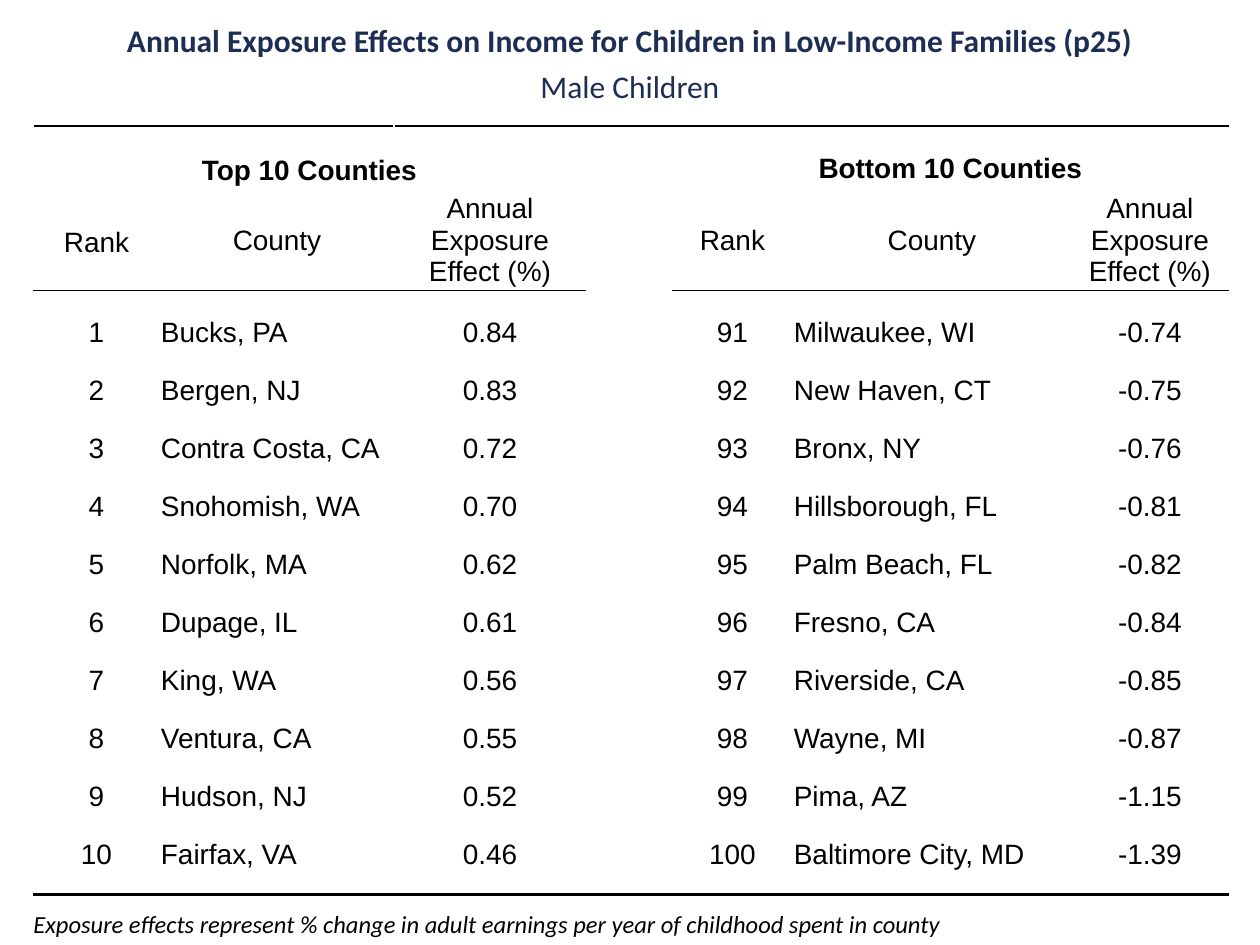
from lxml import etree
from pptx import Presentation
from pptx import util as u
from pptx.dml.color import RGBColor
from pptx.enum import text
from pptx.oxml import ns

PX = 914400 / 126
BLACK, WHITE, NAVY = "000000", "FFFFFF", "1E2D53"
CENTER, LEFT = text.PP_ALIGN.CENTER, text.PP_ALIGN.LEFT
MIDDLE, BOTTOM = text.MSO_ANCHOR.MIDDLE, text.MSO_ANCHOR.BOTTOM
NO_STYLE = "{2D5ABB26-0587-4C30-8999-92F81FD0307C}"


def px(n):
    return u.Emu(round(n * PX))


def rgb(value):
    return RGBColor.from_string(value)


class Sheet:
    heading_font, table_font = "Calibri", "Arial"
    table_size = 16

    def __init__(self, prs):
        self.slide = prs.slides.add_slide(prs.slide_layouts[6])

    def style(self, paragraph, font, size, color, align, bold=False, italic=False):
        paragraph.alignment = align
        for run in paragraph.runs:
            run.font.name, run.font.size = font, u.Pt(size)
            run.font.bold, run.font.italic = bold, italic
            run.font.color.rgb = rgb(color)

    def label(self, words, box, size, color, align=LEFT, inset=True, **look):
        frame = self.slide.shapes.add_textbox(*map(px, box)).text_frame
        frame.word_wrap = True
        frame.auto_size = text.MSO_AUTO_SIZE.SHAPE_TO_FIT_TEXT
        if not inset:
            frame.margin_left = frame.margin_right = 0
            frame.margin_top = frame.margin_bottom = 0
        frame.text = words
        self.style(frame.paragraphs[0], self.heading_font, size, color, align, **look)

    def table(self, left, top, widths, heights):
        box = map(px, (left, top, sum(widths), sum(heights)))
        grid = self.slide.shapes.add_table(len(heights), len(widths), *box).table
        grid.first_row = grid.horz_banding = False
        grid._tbl.tblPr.find(ns.qn("a:tableStyleId")).text = NO_STYLE
        for column, width in zip(grid.columns, widths):
            column.width = px(width)
        for row, height in zip(grid.rows, heights):
            row.height = px(height)
        return grid

    def cell(self, cell, words, borders, anchor=MIDDLE, align=CENTER,
             side=8, bold=False, spacing=None):
        cell.margin_left = cell.margin_right = px(side)
        cell.margin_top = cell.margin_bottom = 0
        cell.vertical_anchor = anchor
        for edge in "LRTB":
            if edge in borders:
                self.border(cell, edge, *borders[edge])
        cell.fill.solid()
        cell.fill.fore_color.rgb = rgb(WHITE)
        cell.text_frame.text = words
        paragraph = cell.text_frame.paragraphs[0]
        self.style(paragraph, self.table_font, self.table_size, BLACK, align, bold)
        if spacing:
            paragraph.line_spacing = spacing
        if not words:
            # A small end mark keeps empty rows from growing
            etree.SubElement(paragraph._p, ns.qn("a:endParaRPr"), sz="800")

    def border(self, cell, edge, color, width):
        properties = cell._tc.get_or_add_tcPr()
        line = etree.SubElement(properties, ns.qn("a:ln" + edge), w=str(u.Pt(width)))
        fill = etree.SubElement(line, ns.qn("a:solidFill"))
        etree.SubElement(fill, ns.qn("a:srgbClr"), val=color)


TOP = [("Bucks, PA", "0.84"), ("Bergen, NJ", "0.83"), ("Contra Costa, CA", "0.72"),
       ("Snohomish, WA", "0.70"), ("Norfolk, MA", "0.62"), ("Dupage, IL", "0.61"),
       ("King, WA", "0.56"), ("Ventura, CA", "0.55"), ("Hudson, NJ", "0.52"),
       ("Fairfax, VA", "0.46")]
LAST = [("Milwaukee, WI", "-0.74"), ("New Haven, CT", "-0.75"), ("Bronx, NY", "-0.76"),
        ("Hillsborough, FL", "-0.81"), ("Palm Beach, FL", "-0.82"),
        ("Fresno, CA", "-0.84"), ("Riverside, CA", "-0.85"), ("Wayne, MI", "-0.87"),
        ("Pima, AZ", "-1.15"), ("Baltimore City, MD", "-1.39")]
HEADS = ["Rank", "County", "Annual Exposure Effect (%)"]
WIDTHS = [127, 234, 192, 86, 121, 278, 158]
HEIGHTS = [21, 43, 97] + [58] * len(TOP) + [24]
GAP = 3  # empty column between the two halves


def build_counties(sheet):
    grid = sheet.table(33, 126, WIDTHS, HEIGHTS)
    thick, thin, blank = (BLACK, 1.5), (BLACK, 1), (WHITE, 1)
    bottom = len(HEIGHTS) - 1

    # Rules above and below the table
    for col in range(len(WIDTHS)):
        edges = {"T": thick}
        if col in (0, 2):
            edges["L"] = blank
        if col in (1, len(WIDTHS) - 1):
            edges["R"] = blank
        sheet.cell(grid.cell(0, col), "", edges)
        sheet.cell(grid.cell(bottom, col), "", {"B": thick})
    grid.cell(0, 0).merge(grid.cell(0, 1))
    grid.cell(0, 2).merge(grid.cell(0, len(WIDTHS) - 1))

    # Group titles
    for col, title in enumerate(["Top 10 Counties", "", "", "", "Bottom 10 Counties", "", ""]):
        sheet.cell(grid.cell(1, col), title, {}, bold=True, spacing=None if col else 1.15)
    for first in (0, GAP + 1):
        grid.cell(1, first).merge(grid.cell(1, first + 2))

    # Column heads
    for col, head in enumerate(HEADS + [""] + HEADS):
        sheet.cell(grid.cell(2, col), head, {} if col == GAP else {"B": thin},
                   spacing=None if col else 1.15)

    # Ranked counties
    for i, (best, worst) in enumerate(zip(TOP, LAST)):
        values = [str(i + 1), *best, "", str(i + 91), *worst]
        for col, value in enumerate(values):
            sheet.cell(grid.cell(i + 3, col), value, {}, BOTTOM,
                       LEFT if col in (1, GAP + 2) else CENTER, side=1)


def main():
    prs = Presentation()
    prs.slide_width, prs.slide_height = px(1260), px(945)
    sheet = Sheet(prs)

    # Subtitle and note
    sheet.label("Male Children", (0, 67, 1260, 38), 18, NAVY, CENTER, inset=False)
    sheet.label("Exposure effects represent % change in adult earnings per year of "
                "childhood spent in county", (21, 903, 1040, 77), 14, BLACK, italic=True)

    build_counties(sheet)

    # Title
    sheet.label("Annual Exposure Effects on Income for Children in Low-Income Families (p25)",
                (0, 21, 1260, 38), 18, NAVY, CENTER, inset=False, bold=True)
    prs.save("out.pptx")


if __name__ == "__main__":
    main()
